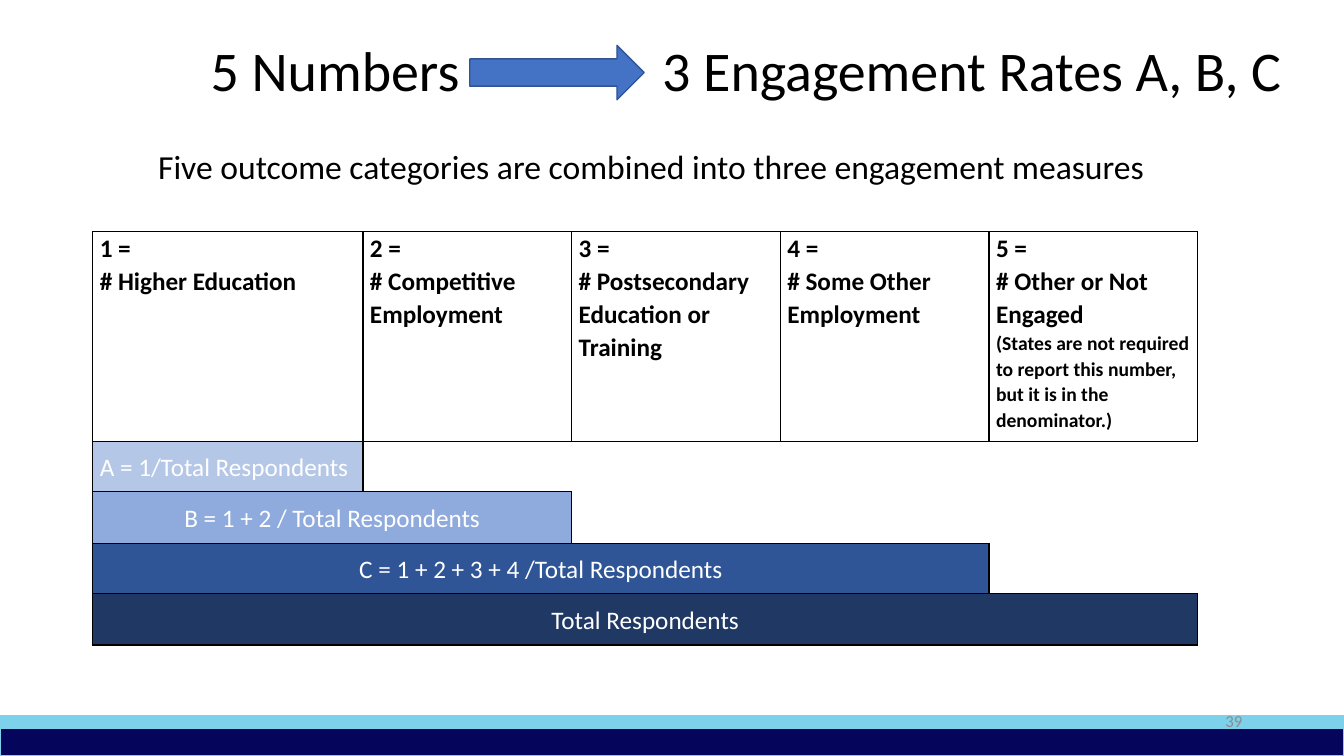
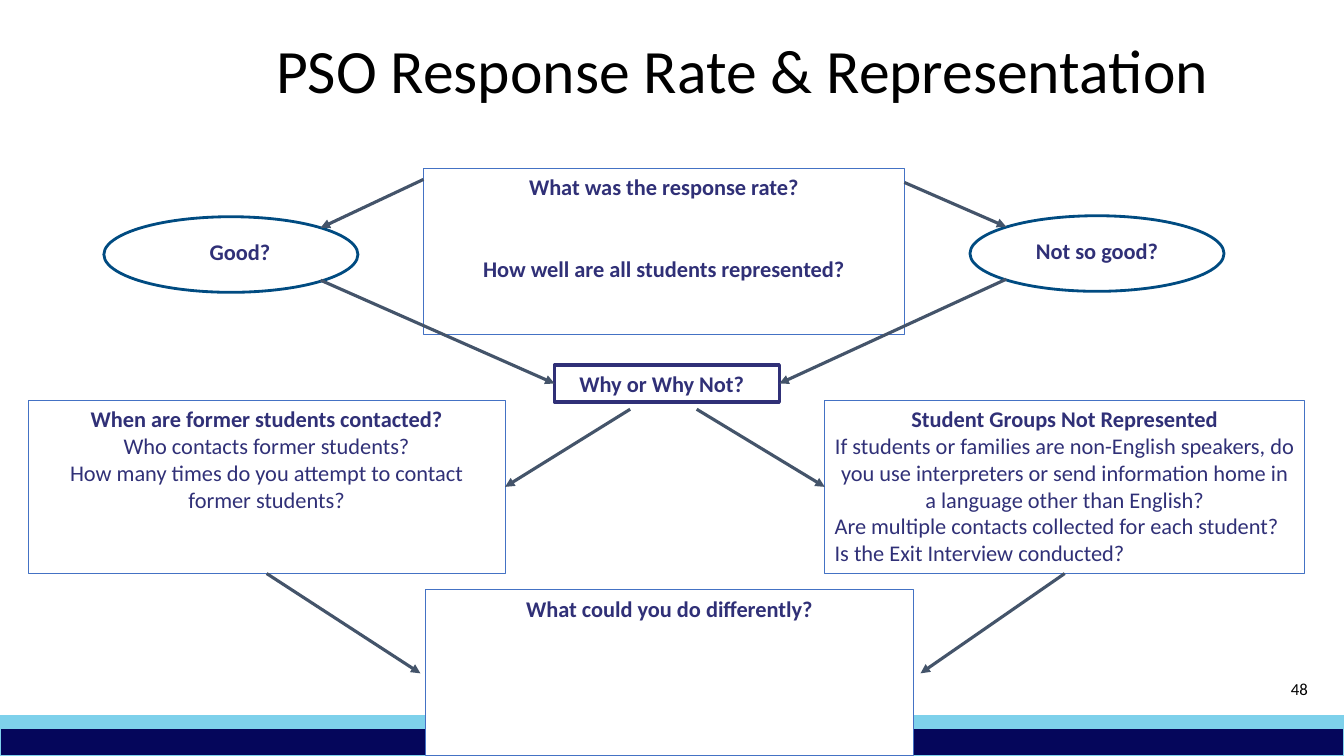
from dataclasses import dataclass

from lxml import etree
from pptx import Presentation
from pptx import util as u
from pptx.dml.color import RGBColor
from pptx.enum import shapes, text
from pptx.oxml import ns

EMU_PER_PX = 9144  # 100 px to the inch
COLORS = {
    "black": "000000", "white": "FFFFFF", "gray": "8C8C8C",
    "sky": "7ED1EB", "navy": "05065B", "ink": "303077",
    "blue": "4472C4", "blue_edge": "325491", "oval_edge": "004B81",
    "slate": "44546A", "rate_a": "B4C7E7", "rate_b": "8FAADC",
    "rate_c": "2F5597", "total": "203864",
}
FONT = "Calibri"
ALIGN = text.PP_ALIGN
ANCHOR = text.MSO_ANCHOR
SHAPE = shapes.MSO_SHAPE
TOP, LEFT, BOTTOM, RIGHT = range(4)


@dataclass
class Para:
    text: str
    size: int = 16
    color: str = "ink"
    bold: bool = False
    align: ALIGN = ALIGN.CENTER
    line: float = 1.0
    before: int = 0


def px(*lengths):
    return [u.Emu(length * EMU_PER_PX) for length in lengths]


def rgb(name):
    return RGBColor.from_string(COLORS[name])


class Deck:
    def __init__(self):
        self.prs = Presentation()
        self.prs.slide_width, self.prs.slide_height = px(1333, 750)
        self.slide = None

    def new_slide(self):
        """Add a blank slide with the two footer bands."""
        self.slide = self.prs.slides.add_slide(self.prs.slide_layouts[6])
        self.shape(SHAPE.RECTANGLE, (0, 710, 1333, 40), "sky", "sky", 1)
        self.shape(SHAPE.RECTANGLE, (0, 723, 1333, 27), "navy", "sky", 1)

    def fill_frame(self, frame, paras, anchor=ANCHOR.TOP,
                   insets=(10, 5, 10, 5)):
        frame.word_wrap = True
        frame.vertical_anchor = anchor
        (frame.margin_left, frame.margin_top,
         frame.margin_right, frame.margin_bottom) = px(*insets)
        self.paragraphs(frame, paras)

    def paragraphs(self, frame, paras):
        frame.text = "\n".join(para.text for para in paras)
        for paragraph, para in zip(frame.paragraphs, paras):
            paragraph.alignment = para.align
            paragraph.line_spacing = para.line
            if para.before:
                paragraph.space_before = u.Pt(para.before)
            for run in paragraph.runs:
                run.font.name = FONT
                run.font.size = u.Pt(para.size)
                run.font.bold = para.bold
                run.font.color.rgb = rgb(para.color)

    def text(self, box, para, anchor=ANCHOR.TOP):
        label = self.slide.shapes.add_textbox(*px(*box))
        self.fill_frame(label.text_frame, [para], anchor)

    def title(self, box, words, size, align=ALIGN.LEFT):
        self.text(box, Para(words, size, "black", align=align, line=0.9),
                  ANCHOR.MIDDLE)

    def number(self, box, value, color, anchor):
        self.text(box, Para(value, 12, color, align=ALIGN.RIGHT), anchor)

    def shape(self, kind, box, fill, line, width, paras=(), **layout):
        shape = self.slide.shapes.add_shape(kind, *px(*box))
        shape.shadow.inherit = False
        if fill:
            shape.fill.solid()
            shape.fill.fore_color.rgb = rgb(fill)
        else:
            shape.fill.background()
        shape.line.color.rgb = rgb(line)
        shape.line.width = u.Pt(width)
        if paras:
            self.fill_frame(shape.text_frame, paras, **layout)
        return shape

    def question_box(self, box, paras, fill=None):
        return self.shape(SHAPE.RECTANGLE, box, fill, "blue", 0.75, paras)

    def oval(self, box, words, insets):
        self.shape(SHAPE.OVAL, box, "white", "oval_edge", 2,
                   [Para(words, bold=True)],
                   anchor=ANCHOR.MIDDLE, insets=insets)

    def arrow(self, start, end, leaves=None, enters=None):
        """Draw an arrow; leaves and enters are (shape, side) joints."""
        arrow = self.slide.shapes.add_connector(
            shapes.MSO_CONNECTOR.STRAIGHT, *px(*start, *end))
        if leaves:
            arrow.begin_connect(*leaves)
        if enters:
            arrow.end_connect(*enters)
        arrow.line.color.rgb = rgb("slate")
        arrow.line.width = u.Pt(2.25)
        props = arrow._element.spPr
        etree.SubElement(props.find(ns.qn("a:ln")), ns.qn("a:tailEnd"),
                         type="triangle")
        etree.SubElement(props, ns.qn("a:effectLst"))

    def borders(self, cell, sides):
        """Rule the named sides (of L, R, T, B) and clear the others."""
        props = cell._tc.get_or_add_tcPr()
        for side in "LRTB":
            line = etree.SubElement(props, ns.qn(f"a:ln{side}"), w="12700")
            if side in sides:
                fill = etree.SubElement(line, ns.qn("a:solidFill"))
                etree.SubElement(fill, ns.qn("a:srgbClr"),
                                 val=COLORS["black"])
            else:
                etree.SubElement(line, ns.qn("a:noFill"))

    def cell(self, cell, paras, fill, anchor):
        cell.vertical_anchor = anchor
        (cell.margin_left, cell.margin_top,
         cell.margin_right, cell.margin_bottom) = px(7, 0, 7, 0)
        self.paragraphs(cell.text_frame, paras)
        if fill:
            cell.fill.solid()
            cell.fill.fore_color.rgb = rgb(fill)
        else:
            cell.fill.background()

    def stair_table(self, box, widths, heights, heads, bars):
        """Head row over bars, each (text, colour, columns covered)."""
        table = self.slide.shapes.add_table(
            len(heights), len(widths), *px(*box)).table
        table.first_row = table.horz_banding = False
        for column, width in zip(table.columns, px(*widths)):
            column.width = width
        for row, height in zip(table.rows, px(*heights)):
            row.height = height
        spans = [len(widths)] + [span for _, _, span in bars]
        for r, span in enumerate(spans):
            for c in range(len(widths)):
                cell = table.cell(r, c)
                if c < span:
                    self.borders(cell, "LRTB")
                    continue
                sides = "L" if c == span else ""
                sides += "T" if c < spans[r - 1] else ""
                sides += "B" if c < spans[r + 1] else ""
                self.borders(cell, sides)
                cell.fill.background()
        for c, paras in enumerate(heads):
            self.cell(table.cell(0, c), paras, None, ANCHOR.TOP)
        for r, (words, color, span) in enumerate(bars, 1):
            first = table.cell(r, 0)
            if span > 1:
                first.merge(table.cell(r, span - 1))
            align = ALIGN.CENTER if span > 1 else ALIGN.LEFT
            self.cell(first, [Para(words, 18, "white", align=align,
                                   line=1.07)], color, ANCHOR.MIDDLE)


def engagement_rates(deck):
    deck.new_slide()
    categories = ["Higher Education", "Competitive Employment",
                  "Postsecondary Education or Training",
                  "Some Other Employment", "Other or Not Engaged"]

    def head(words, size=18):
        return Para(words, size, "black", True, ALIGN.LEFT, 1.07)

    heads = [[head(f"{n} ="), head(f"# {category}")]
             for n, category in enumerate(categories, 1)]
    heads[-1].append(head("(States are not required to report this number, "
                          "but it is in the denominator.)", 14))
    deck.stair_table(
        (92, 230, 1096, 410), [268] + [207] * 4, [208] + [50, 51] * 2, heads,
        [("A = 1/Total Respondents", "rate_a", 1),
         ("B = 1 + 2 / Total Respondents", "rate_b", 2),
         ("C = 1 + 2 + 3 + 4 /Total Respondents", "rate_c", 4),
         ("Total Respondents", "total", 5)])
    deck.title((199, 0, 275, 145), "5 Numbers", 40)
    deck.title((647, 0, 680, 145), "3 Engagement Rates A, B, C", 40)
    deck.shape(SHAPE.RIGHT_ARROW, (466, 45, 173, 54), "blue", "blue_edge", 1)
    deck.text((147, 140, 1030, 50), Para(
        "Five outcome categories are combined into three engagement measures",
        24, "black", align=ALIGN.LEFT))
    deck.number((942, 695, 300, 40), "39", "gray", ANCHOR.MIDDLE)


def response_rate(deck):
    deck.new_slide()
    deck.title((221, 0, 1031, 145), "PSO Response Rate & Representation", 44,
               ALIGN.CENTER)
    deck.question_box((420, 167, 477, 165), [
        Para("What was the response rate?", bold=True),
        Para("How well are all students represented?", bold=True, before=39)])
    deck.oval((103, 215, 252, 75), "Good?", (28, 0, 10, 5))
    deck.oval((962, 214, 252, 75), "Not so good?", (10, 0, 10, 5))
    why = deck.shape(SHAPE.RECTANGLE, (550, 362, 223, 37), "white", "ink",
                     2.5, [Para("Why or Why Not?", bold=True)],
                     insets=(10, 5, 20, 5))
    contact = deck.question_box((28, 397, 473, 172), [
        Para("When are former students contacted?", bold=True),
        Para("Who contacts former students?"),
        Para("How many times do you attempt to contact former students?")])
    groups = deck.question_box((818, 397, 476, 172), [
        Para("Student Groups Not Represented", bold=True),
        Para("If students or families are non-English speakers, do you use "
             "interpreters or send information home in a language other "
             "than English?"),
        Para("Are multiple contacts collected for each student?",
             align=ALIGN.LEFT),
        Para("Is the Exit Interview conducted?", align=ALIGN.LEFT)])
    deck.question_box((422, 585, 484, 165), [
        Para("What could you do differently?", bold=True)], "white")

    deck.arrow((420, 178), (318, 226))
    deck.arrow((897, 181), (998, 225))
    deck.arrow((318, 278), (550, 381), enters=(why, LEFT))
    deck.arrow((998, 277), (773, 381), enters=(why, RIGHT))
    deck.arrow((625, 406), (501, 483), enters=(contact, RIGHT))
    deck.arrow((691, 406), (818, 483), enters=(groups, LEFT))
    deck.arrow((264, 569), (417, 668), leaves=(contact, BOTTOM))
    deck.arrow((1056, 569), (913, 668), leaves=(groups, BOTTOM))
    deck.number((1007, 668, 300, 40), "48", "black", ANCHOR.TOP)


def main():
    deck = Deck()
    engagement_rates(deck)
    response_rate(deck)
    deck.prs.save("out.pptx")


if __name__ == "__main__":
    main()
